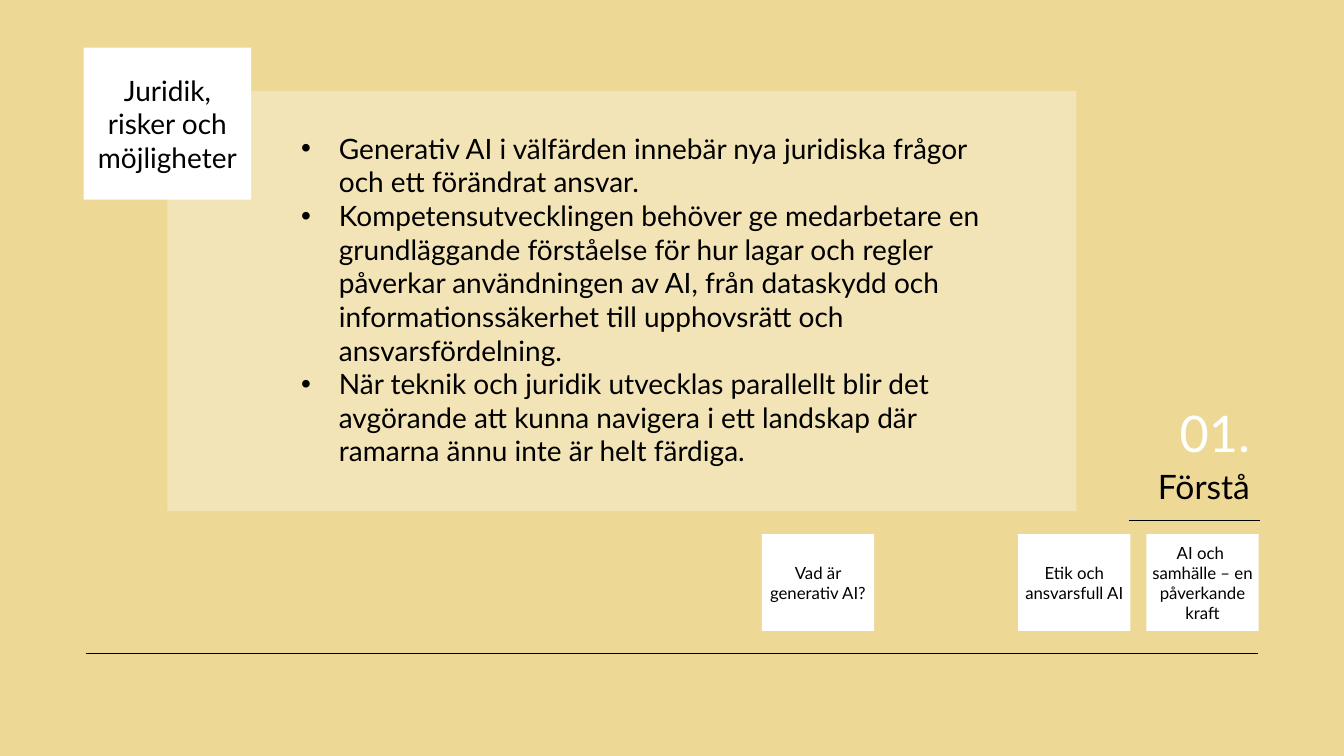
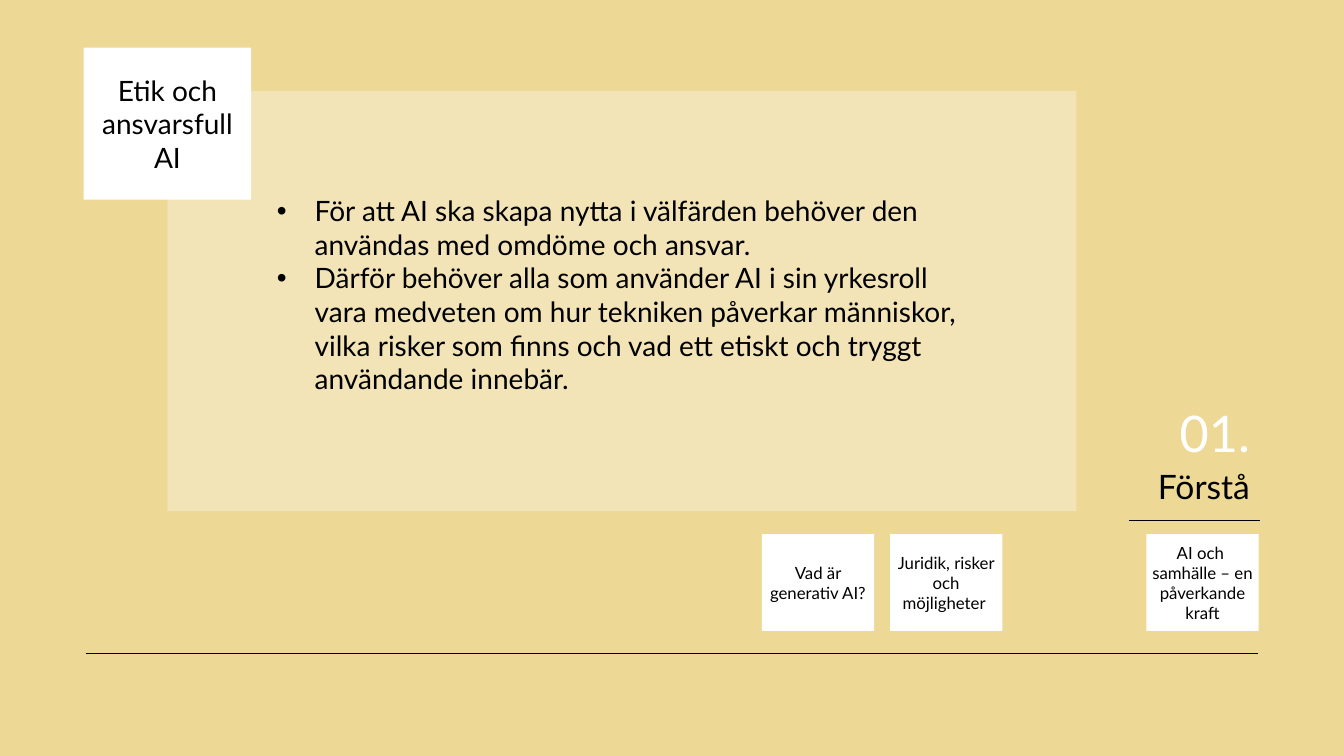
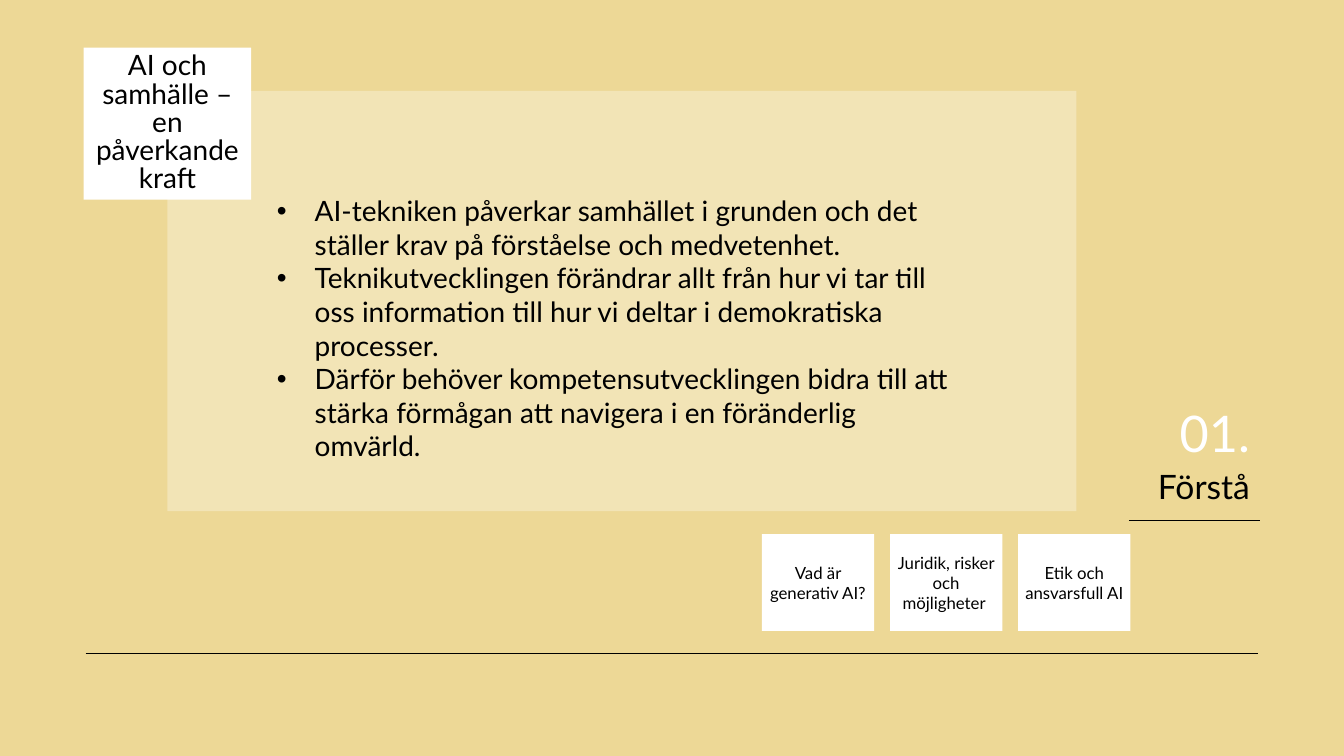
import pptx
import pptx.dml.color
import pptx.enum.shapes
import pptx.enum.text
import pptx.oxml
import pptx.oxml.ns
import pptx.util

Cm = pptx.util.Cm
Pt = pptx.util.Pt
RGBColor = pptx.dml.color.RGBColor
ALIGN = pptx.enum.text.PP_ALIGN
ANCHOR = pptx.enum.text.MSO_ANCHOR
AUTO_SIZE = pptx.enum.text.MSO_AUTO_SIZE
qn = pptx.oxml.ns.qn

SAND = RGBColor(0xED, 0xD8, 0x96)
WHITE = RGBColor(0xFF, 0xFF, 0xFF)
BLACK = RGBColor(0, 0, 0)
FONT = "Lato"
INSET_X, INSET_Y = 0.25, 0.13
BULLET_INDENT = 0.95

CARD_LEFT, CARD_TOP = 19.2, 13.46
CARD_WIDTH, CARD_HEIGHT = 2.83, 2.44
CARD_STEP = 3.23

TOPICS = [
    ["Vad är generativ AI?"],
    ["Juridik, risker och möjligheter "],
    ["Etik och ansvarsfull AI"],
    ["AI och ", "samhälle – en påverkande kraft"],
]

LEGAL_POINTS = [
    "Generativ AI i välfärden innebär nya juridiska frågor och ett förändrat ansvar.",
    "Kompetensutvecklingen behöver ge medarbetare en grundläggande förståelse för hur "
    "lagar och regler påverkar användningen av AI, från dataskydd och "
    "informationssäkerhet till upphovsrätt och ansvarsfördelning.",
    "När teknik och juridik utvecklas parallellt blir det avgörande att kunna navigera "
    "i ett landskap där ramarna ännu inte är helt färdiga.",
]
ETHICS_POINTS = [
    "För att AI ska skapa nytta i välfärden behöver den användas med omdöme och ansvar.",
    "Därför behöver alla som använder AI i sin yrkesroll vara medveten om hur tekniken "
    "påverkar människor, vilka risker som finns och vad ett etiskt och tryggt "
    "användande innebär.",
]
SOCIETY_POINTS = [
    "AI-tekniken påverkar samhället i grunden och det ställer krav på förståelse och "
    "medvetenhet.",
    "Teknikutvecklingen förändrar allt från hur vi tar till oss information till hur vi "
    "deltar i demokratiska processer.",
    "Därför behöver kompetensutvecklingen bidra till att stärka förmågan att navigera i "
    "en föränderlig omvärld.",
]


def place(sp, left, top, width, height):
    sp.left, sp.top, sp.width, sp.height = Cm(left), Cm(top), Cm(width), Cm(height)


def set_frame(sp, anchor, inset_x=INSET_X, inset_y=INSET_Y):
    tf = sp.text_frame
    tf.word_wrap = True
    tf.auto_size = AUTO_SIZE.NONE
    tf.vertical_anchor = anchor
    tf.margin_left = tf.margin_right = Cm(inset_x)
    tf.margin_top = tf.margin_bottom = Cm(inset_y)
    return tf


def set_bullet(p, char=None):
    pPr = p._p.get_or_add_pPr()
    indent = Cm(BULLET_INDENT) if char else 0
    pPr.set("marL", str(indent))
    pPr.set("indent", str(-indent))
    if char:
        pptx.oxml.ns.qn("a:buFont")
        font = pPr.makeelement(qn("a:buFont"), {"typeface": "Arial"})
        pPr.append(font)
        pPr.append(pPr.makeelement(qn("a:buChar"), {"char": char}))
    else:
        pPr.append(pPr.makeelement(qn("a:buNone"), {}))


def write(p, lines, size, color=BLACK, align=ALIGN.LEFT, spacing=1.0):
    p.alignment = align
    p.line_spacing = spacing
    p.space_before = Pt(0)
    for i, line in enumerate(lines):
        if i:
            p.add_line_break()
        r = p.add_run()
        r.text = line
        r.font.name = FONT
        r.font.size = Pt(size)
        r.font.color.rgb = color


def add_rect(slide, left, top, width, height):
    sp = slide.shapes.add_shape(
        pptx.enum.shapes.MSO_SHAPE.RECTANGLE, Cm(left), Cm(top), Cm(width), Cm(height)
    )
    sp.shadow.inherit = False
    sp.fill.solid()
    sp.fill.fore_color.rgb = WHITE
    sp.line.fill.background()
    return sp


def add_rule(slide, left, right, y):
    rule = slide.shapes.add_connector(
        pptx.enum.shapes.MSO_CONNECTOR.STRAIGHT, Cm(left), Cm(y), Cm(right), Cm(y)
    )
    rule.line.color.rgb = BLACK
    rule.line.width = Pt(0.5)
    spPr = rule._element.spPr
    spPr.append(spPr.makeelement(qn("a:effectLst"), {}))
    return rule


def add_panel(slide):
    panel = add_rect(slide, 4.22, 2.29, 22.91, 10.59)
    color = panel._element.spPr.find(".//" + qn("a:srgbClr"))
    color.append(color.makeelement(qn("a:alpha"), {"val": "31000"}))
    slide.shapes._spTree.insert(2, panel._element)


def set_title(slide, text, tight):
    sp = slide.shapes.title
    place(sp, 2.11, 1.2, 4.22, 3.83)
    sp.fill.solid()
    sp.fill.fore_color.rgb = WHITE
    insets = (0, 0) if tight else (INSET_X, INSET_Y)
    tf = set_frame(sp, ANCHOR.MIDDLE, *insets)
    spacing = Pt(20) if tight else 1.0
    write(tf.paragraphs[0], [text], 20, align=ALIGN.CENTER, spacing=spacing)


def set_points(slide, points, left, top, height):
    sp = slide.placeholders[1]
    place(sp, left, top, 17.73, height)
    tf = set_frame(sp, ANCHOR.TOP)
    for i, point in enumerate(points):
        p = tf.add_paragraph() if i else tf.paragraphs[0]
        set_bullet(p, "•")
        write(p, [point], 20)


def add_section(slide, number, name):
    sp = slide.shapes.add_textbox(Cm(29.29), Cm(10.36), Cm(2.46), Cm(1.45))
    tf = set_frame(sp, ANCHOR.BOTTOM)
    write(tf.paragraphs[0], [number], 36, WHITE, ALIGN.RIGHT, 0.9)

    sp = slide.placeholders[2]
    place(sp, 22.48, 11.73, 9.27, 1.12)
    p = set_frame(sp, ANCHOR.TOP).paragraphs[0]
    set_bullet(p)
    write(p, [name], 24, align=ALIGN.RIGHT, spacing=0.9)
    add_rule(slide, 28.45, 31.75, 13.11)


def add_topic_cards(slide, current):
    for i, lines in enumerate(TOPICS):
        if i == current:
            continue
        card = add_rect(
            slide, CARD_LEFT + i * CARD_STEP, CARD_TOP, CARD_WIDTH, CARD_HEIGHT
        )
        tf = set_frame(card, ANCHOR.MIDDLE, 0, 0)
        write(tf.paragraphs[0], lines, 12, align=ALIGN.CENTER)


def add_topic_slide(prs, layout, current, points, left, top, height, tight=False):
    slide = prs.slides.add_slide(layout)
    add_panel(slide)
    set_points(slide, points, left, top, height)
    set_title(slide, "".join(TOPICS[current]).strip(), tight)
    add_section(slide, "01.", "Förstå")
    add_topic_cards(slide, current)
    return slide


def set_theme(prs, layout, slide):
    fill = prs.slide_master.background.fill
    fill.solid()
    fill.fore_color.rgb = SAND
    rule = add_rule(slide, 2.16, 31.7, 16.46)
    layout.shapes._spTree.append(rule._element)


def main():
    prs = pptx.Presentation()
    prs.slide_width, prs.slide_height = Cm(33.87), Cm(19.05)
    layout = prs.slide_layouts.get_by_name("Two Content")

    first = add_topic_slide(prs, layout, 1, LEGAL_POINTS, 7.34, 3.18, 8.81)
    add_topic_slide(prs, layout, 2, ETHICS_POINTS, 6.73, 4.75, 5.38)
    add_topic_slide(prs, layout, 3, SOCIETY_POINTS, 6.73, 4.75, 5.38, tight=True)
    set_theme(prs, layout, first)
    prs.save("out.pptx")


if __name__ == "__main__":
    main()
